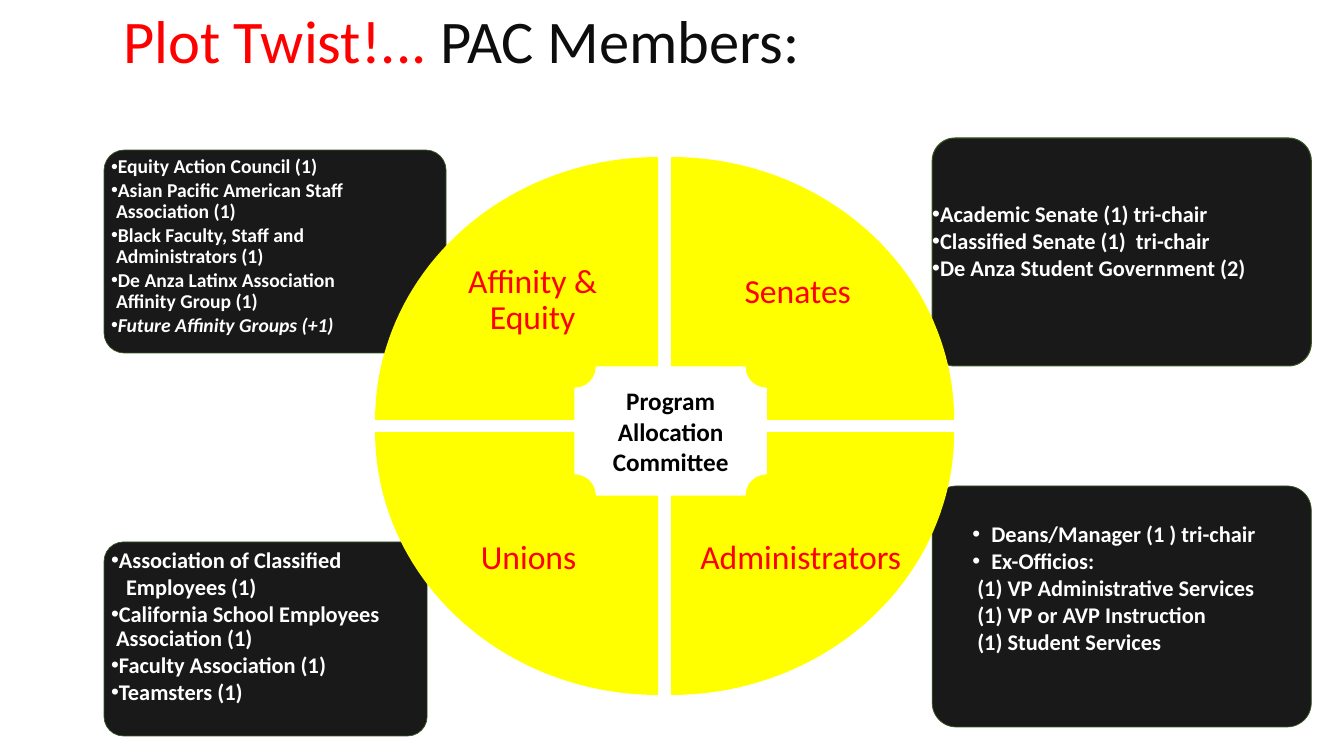
import math
from lxml import etree
from pptx import Presentation
from pptx import util as u
from pptx.dml.color import RGBColor
from pptx.enum import shapes, text
from pptx.oxml import ns

BLACK = RGBColor(0, 0, 0)
WHITE = RGBColor(255, 255, 255)
RED = RGBColor(255, 0, 0)
YELLOW = RGBColor(255, 255, 0)
INK = RGBColor(0x0D, 0x0D, 0x0D)
GREEN = RGBColor(0x38, 0x57, 0x23)
FONT = "Calibri"
EMU_PER_PX = 914400 / 100.8

TITLE = [("Plot Twist!... ", RED), ("PAC Members:\v", INK)]
TITLE_BOX = (113, 26, 1166, 109)

TIGHT = (5, -5, True)
WIDE = (19, -19, True)
PLAIN = (5, 0, False)
DEEP = (15, 0, False)

# box, insets (left, top, right, bottom), text size, border width, lines
PANELS = [
    ((932, 486, 379, 241), (40, 37, 10, 7), 16, 0.5, [
        ("Deans/Manager (1 ) tri-chair", WIDE),
        ("Ex-Officios:", WIDE),
        ("(1) VP Administrative Services", PLAIN),
        ("(1) VP or AVP Instruction", PLAIN),
        ("(1) Student Services", PLAIN)]),
    ((104, 150, 342, 203), (7, 7, 74, 7), 14, 0.5, [
        ("Equity Action Council (1)", TIGHT),
        ("Asian Pacific American Staff Association (1)", TIGHT),
        ("Black Faculty, Staff and Administrators (1)", TIGHT),
        ("De Anza Latinx Association Affinity Group (1)", TIGHT),
        ("Future Affinity Groups (+1)", TIGHT)]),
    ((104, 542, 323, 194), (7, 7, 7, 42), 16, 0.5, [
        ("Association of Classified", TIGHT),
        ("Employees (1)", DEEP),
        ("California School Employees Association (1)", TIGHT),
        ("Faculty Association (1)", TIGHT),
        ("Teamsters (1)", TIGHT)]),
    ((932, 138, 379, 228), (0, 65, 0, 42), 16, 0.75, [
        ("Academic Senate (1) tri-chair", TIGHT),
        ("Classified Senate (1)  tri-chair", TIGHT),
        ("De Anza Student Government (2)", TIGHT)]),
]
ITALIC_LINE = "Future Affinity Groups (+1)"
CORNER = 0.1

RADIUS_X, RADIUS_Y = 283, 263
LEFT_EDGE, RIGHT_EDGE = 658, 671
TOP_EDGE, BOTTOM_EDGE = 420, 432
ARC_STEPS = 45
WEDGES = [
    ("Affinity & Equity", -1, -1, (62, 30, 30, 6)),
    ("Senates", 1, -1, (23, 15, 53, 6)),
    ("Administrators", 1, 1, (6, 53, 30, 62)),
    ("Unions", -1, 1, (62, 53, 38, 62)),
]
HUB = "Program Allocation Committee"
HUB_BOX = (575, 367, 191, 128)


def px(value):
    return u.Emu(round(value * EMU_PER_PX))


def style_run(run, size, color, bold=False):
    run.font.name = FONT
    run.font.size = u.Pt(size)
    run.font.color.rgb = color
    run.font.bold = bold


def paint(shape, fill, line=None, width=1):
    shape.shadow.inherit = False
    shape.fill.solid()
    shape.fill.fore_color.rgb = fill
    if line is None:
        shape.line.fill.background()
    else:
        shape.line.color.rgb = line
        shape.line.width = u.Pt(width)


def set_insets(frame, insets):
    frame.word_wrap = True
    (frame.margin_left, frame.margin_top,
     frame.margin_right, frame.margin_bottom) = map(px, insets)


def center_text(shape, content, size, color, bold=False):
    frame = shape.text_frame
    frame.word_wrap = True
    frame.vertical_anchor = text.MSO_ANCHOR.MIDDLE
    frame.text = content
    paragraph = frame.paragraphs[0]
    paragraph.alignment = text.PP_ALIGN.CENTER
    style_run(paragraph.runs[0], size, color, bold)
    return paragraph


def add_title(slide):
    title = slide.shapes.title
    title.left, title.top, title.width, title.height = map(px, TITLE_BOX)
    frame = title.text_frame
    frame.auto_size = text.MSO_AUTO_SIZE.NONE
    frame.vertical_anchor = text.MSO_ANCHOR.MIDDLE
    paragraph = frame.paragraphs[0]
    paragraph.alignment = text.PP_ALIGN.LEFT
    paragraph.line_spacing = 0.9
    paragraph.font.size = u.Pt(43.2)
    for content, color in TITLE:
        run = paragraph.add_run()
        words = content.rstrip("\v")
        run.text = words
        style_run(run, 43.2, color)
        if words != content:
            paragraph.add_line_break()
            paragraph._p.findall(ns.qn("a:br"))[-1].append(
                etree.fromstring(etree.tostring(run.font._element)))


def add_panel(slide, box, insets, size, width, lines):
    shape = slide.shapes.add_shape(
        shapes.MSO_SHAPE.ROUNDED_RECTANGLE, *map(px, box))
    shape.adjustments[0] = CORNER
    paint(shape, BLACK, GREEN, width)
    color = shape.fill._xPr.find(".//" + ns.qn("a:srgbClr"))
    etree.SubElement(color, ns.qn("a:alpha"), val="90000")
    frame = shape.text_frame
    corner_inset = 0.29 * CORNER * min(box[2:])
    set_insets(frame, [inset - corner_inset for inset in insets])
    frame.vertical_anchor = text.MSO_ANCHOR.TOP
    frame.text = "\n".join(content for content, _ in lines)
    for paragraph, (content, (margin, indent, bullet)) in zip(frame.paragraphs, lines):
        paragraph.alignment = text.PP_ALIGN.LEFT
        paragraph.line_spacing = 0.9
        paragraph.space_after = u.Pt(round(0.13 * size, 2))
        run = paragraph.runs[0]
        style_run(run, size, WHITE, True)
        if content == ITALIC_LINE:
            run.font.italic = True
        properties = paragraph._p.get_or_add_pPr()
        properties.set("marL", str(px(margin)))
        properties.set("indent", str(px(indent)))
        if bullet:
            etree.SubElement(properties, ns.qn("a:buFont"), typeface="Arial")
            etree.SubElement(properties, ns.qn("a:buChar"), char="•")


def add_wedge(slide, label, side_x, side_y, insets):
    corner_x = RIGHT_EDGE if side_x > 0 else LEFT_EDGE
    corner_y = BOTTOM_EDGE if side_y > 0 else TOP_EDGE
    angles = [math.pi / 2 * step / ARC_STEPS for step in range(ARC_STEPS + 1)]
    arc = [(px(corner_x + side_x * RADIUS_X * math.cos(angle)),
            px(corner_y + side_y * RADIUS_Y * math.sin(angle))) for angle in angles]
    builder = slide.shapes.build_freeform(px(corner_x), px(corner_y))
    builder.add_line_segments(arc, close=True)
    shape = builder.convert_to_shape()
    paint(shape, YELLOW)
    set_insets(shape.text_frame, insets)
    center_text(shape, label, 24, RED).line_spacing = 0.9


def main():
    presentation = Presentation()
    presentation.slide_width = u.Inches(13.33)
    presentation.slide_height = u.Inches(7.5)
    slide = presentation.slides.add_slide(presentation.slide_layouts[5])
    add_title(slide)
    for panel in PANELS:
        add_panel(slide, *panel)
    for wedge in WEDGES:
        add_wedge(slide, *wedge)
    hub = slide.shapes.add_shape(shapes.MSO_SHAPE.PLAQUE, *map(px, HUB_BOX))
    paint(hub, WHITE, WHITE)
    center_text(hub, HUB, 18, BLACK, True)
    presentation.save("out.pptx")


if __name__ == "__main__":
    main()
